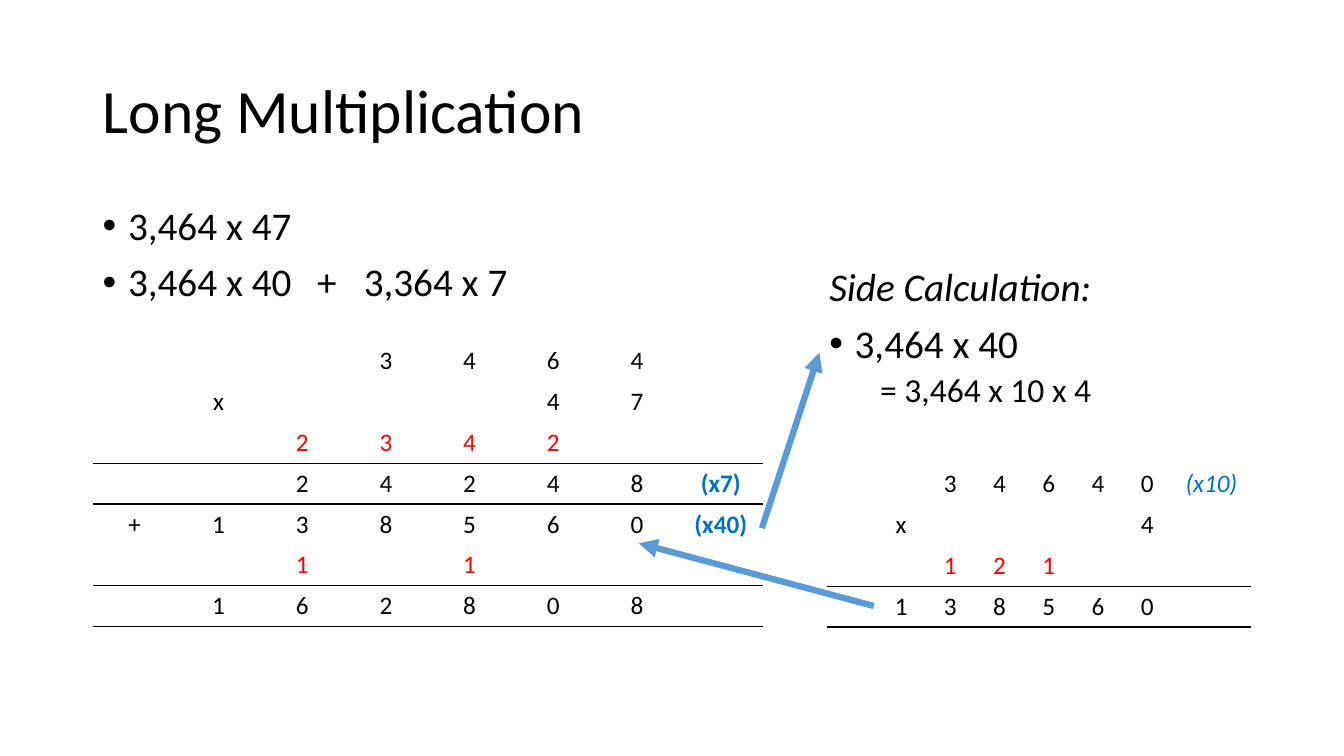
from dataclasses import dataclass

from lxml import etree
from pptx import Presentation
from pptx.dml.color import RGBColor
from pptx.enum.shapes import MSO_CONNECTOR
from pptx.enum.text import MSO_ANCHOR, PP_ALIGN
from pptx.oxml.ns import qn
from pptx.util import Cm, Pt

MIDDLE, TOP = MSO_ANCHOR.MIDDLE, MSO_ANCHOR.TOP
CENTER = PP_ALIGN.CENTER
STRAIGHT = MSO_CONNECTOR.STRAIGHT
FONT = "Calibri"
BLACK, RED, BLUE, ARROW = "000000", "FF0000", "0070C0", "5B9BD5"
PLAIN_STYLE = "{2D5ABB26-0587-4C30-8999-92F81FD0307C}"
ROW = 1.03
INDENT = 0.64


@dataclass
class Line:
    text: str
    size: int = 28
    bullet: bool = False
    italic: bool = False
    left: float = 0
    before: int = 10
    tabs: tuple[float, ...] = ()


@dataclass
class Box:
    left: float
    top: float
    width: float
    height: float
    lines: list[Line]
    anchor: MSO_ANCHOR = TOP


@dataclass
class Sum:
    """A written sum: one character per column, then a column of notes."""
    left: float
    top: float
    digit: float
    note: float
    rows: list[str]
    notes: dict[int, str]
    carry: set[int]
    ruled: set[int]
    italic: bool = False


@dataclass
class Arrow:
    start: tuple[float, float]
    end: tuple[float, float]


BOXES = [
    Box(2.34, 1.02, 29.21, 3.68, [Line("Long Multiplication", 44, before=0)], MIDDLE),
    Box(2.34, 5.08, 17.37, 12.09, [
        Line("3,464 x 47", bullet=True),
        Line("3,464 x 40\t+\t3,364 x 7", bullet=True, tabs=(5.4, 6.58)),
    ]),
    Box(20.65, 6.63, 10.9, 10.54, [
        Line("Side Calculation:", italic=True),
        Line("3,464 x 40", bullet=True),
        Line("= 3,464 x 10 x 4", 24, left=2 * INDENT, before=5),
    ]),
]
SUMS = [
    Sum(2.34, 8.58, 2.11, 2.11,
        ["   3464", " x   47", "  2342 ", "  24248", "+138560", "  1 1  ", " 162808"],
        {3: "(x7)", 4: "(x40)"}, carry={2, 5}, ruled={2, 5, 6}),
    Sum(20.85, 11.68, 1.24, 2,
        ["  34640", " x    4", "  121  ", " 138560"],
        {0: "(x10)"}, carry={2}, ruled={2, 3}, italic=True),
]
ARROWS = [
    Arrow((19.2, 13.31), (20.65, 8.89)),
    Arrow((22.02, 15.27), (16.1, 13.69)),
]


def color(code: str) -> RGBColor:
    return RGBColor.from_string(code)


def style(para, size: int, code: str, bold: bool = False, italic: bool = False) -> None:
    for run in para.runs:
        font = run.font
        font.name, font.size, font.bold, font.italic = FONT, Pt(size), bold, italic
        font.color.rgb = color(code)


def add_child(node, tag: str, **attrs: str):
    return etree.SubElement(node, qn(tag), attrs)


def set_indent(para, line: Line) -> None:
    """Set the left margin, bullet and tab stops of a paragraph."""
    props = para._p.get_or_add_pPr()
    hang = INDENT if line.bullet else 0
    props.set("marL", str(Cm(line.left + hang)))
    props.set("indent", str(Cm(-hang)))
    if line.bullet:
        add_child(props, "a:buFont", typeface="Arial")
        add_child(props, "a:buChar", char="•")
    else:
        add_child(props, "a:buNone")
    if line.tabs:
        stops = add_child(props, "a:tabLst")
        for stop in line.tabs:
            add_child(stops, "a:tab", pos=str(Cm(stop)), algn="l")


def add_box(slide, box: Box) -> None:
    shape = slide.shapes.add_textbox(Cm(box.left), Cm(box.top), Cm(box.width), Cm(box.height))
    frame = shape.text_frame
    frame.word_wrap = True
    frame.vertical_anchor = box.anchor
    frame.text = "\n".join(line.text for line in box.lines)
    for para, line in zip(frame.paragraphs, box.lines):
        para.line_spacing = 0.9
        para.space_before = Pt(line.before)
        set_indent(para, line)
        style(para, line.size, BLACK, italic=line.italic)


def add_rule(cell, side: str) -> None:
    edge = add_child(cell._tc.get_or_add_tcPr(), side, w=str(Pt(1)))
    fill = add_child(edge, "a:solidFill")
    add_child(fill, "a:srgbClr", val=BLACK)


def add_sum(slide, work: Sum) -> None:
    widths = [work.digit] * len(work.rows[0]) + [work.note]
    count = len(work.rows)
    frame = slide.shapes.add_table(count, len(widths), Cm(work.left), Cm(work.top),
                                   Cm(sum(widths)), Cm(ROW * count))
    table = frame.table
    table.first_row = table.horz_banding = False
    table._tbl.tblPr[0].text = PLAIN_STYLE
    for col, width in zip(table.columns, widths):
        col.width = Cm(width)
    for r, digits in enumerate(work.rows):
        table.rows[r].height = Cm(ROW)
        for c, text in enumerate([*digits, work.notes.get(r, "")]):
            cell = table.cell(r, c)
            cell.text = text.strip()
            cell.vertical_anchor = MIDDLE
            para = cell.text_frame.paragraphs[0]
            para.alignment = CENTER
            if c == len(digits):
                style(para, 18, BLUE, bold=not work.italic, italic=work.italic)
            else:
                style(para, 18, RED if r in work.carry else BLACK)
            if r - 1 in work.ruled:
                add_rule(cell, "a:lnT")
            if r in work.ruled:
                add_rule(cell, "a:lnB")
            cell.fill.background()


def add_arrow(slide, arrow: Arrow) -> None:
    points = [Cm(value) for value in (*arrow.start, *arrow.end)]
    link = slide.shapes.add_connector(STRAIGHT, *points)
    link.line.color.rgb = color(ARROW)
    link.line.width = Pt(4.5)
    add_child(link.line._get_or_add_ln(), "a:tailEnd", type="triangle")
    add_child(link._element.spPr, "a:effectLst")


def main() -> None:
    deck = Presentation()
    deck.slide_width, deck.slide_height = Cm(33.87), Cm(19.05)
    slide = deck.slides.add_slide(deck.slide_layouts[6])
    for box in BOXES:
        add_box(slide, box)
    for work in SUMS:
        add_sum(slide, work)
    for arrow in ARROWS:
        add_arrow(slide, arrow)
    deck.save("out.pptx")


if __name__ == "__main__":
    main()
